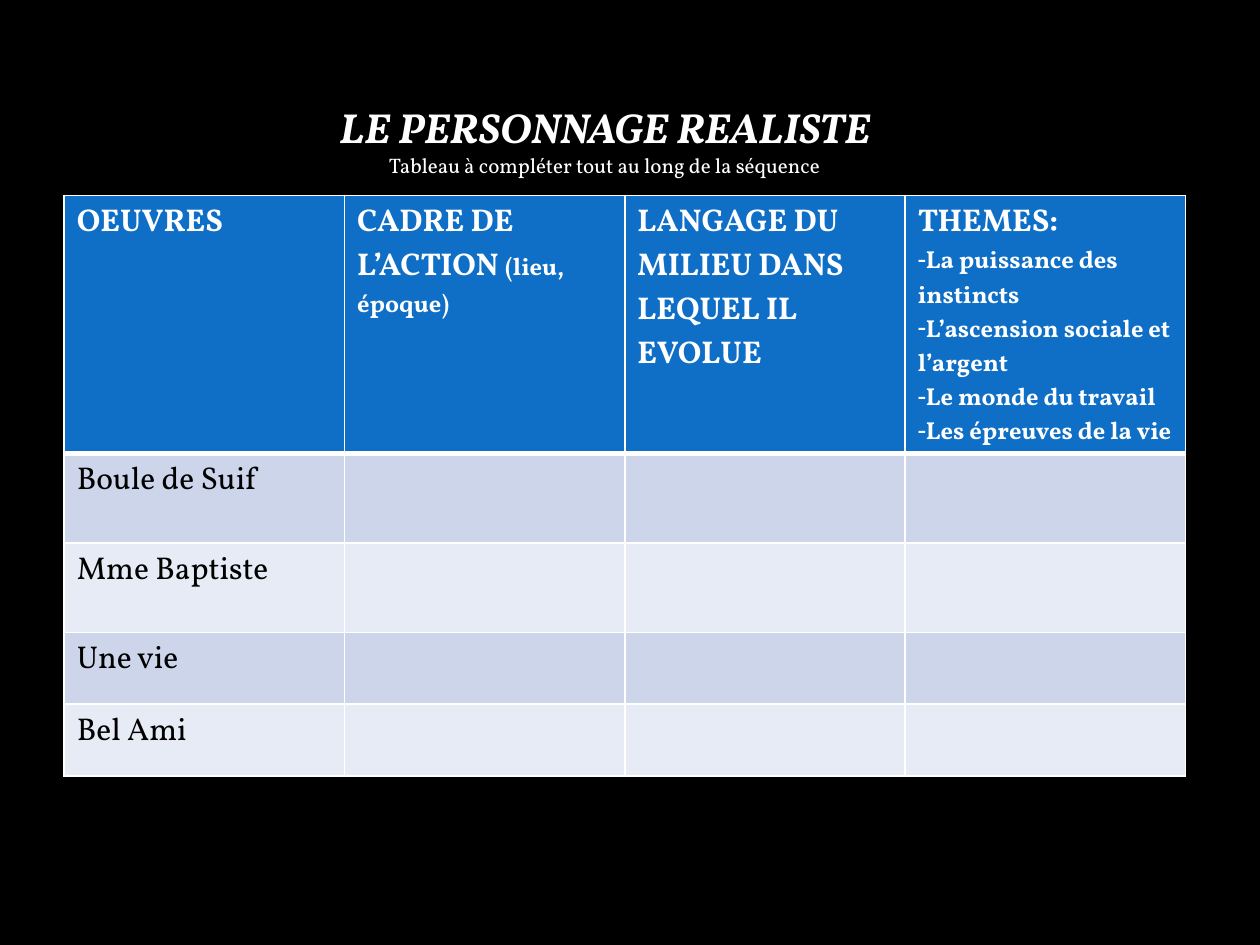
import pptx
import pptx.util
import pptx.dml.color
import pptx.enum.text
import lxml.etree

THEME = dict(
    font="Vollkorn", back="000000", light="FFFFFF", dark="000000",
    head="0F6FC6", bands=("CCD5EA", "E7EBF5"),
    title=24, main=18, list=14, note=12, thin=1, thick=3,
)
RGB = pptx.dml.color.RGBColor.from_string
NS = "{http://schemas.openxmlformats.org/drawingml/2006/main}"


def write(para, text, size=THEME["main"], color=THEME["light"],
          bold=False, slant=False, center=False, mark=None):
    """Add a run to a paragraph, with an optional bullet mark."""
    run = para.add_run()
    run.text = text
    font = run.font
    font.name, font.size = THEME["font"], pptx.util.Pt(size)
    font.bold, font.italic = bold, slant
    font.color.rgb = RGB(color)
    if center:
        para.alignment = pptx.enum.text.PP_ALIGN.CENTER
    if mark:
        props = para._p.get_or_add_pPr()
        props.set("marL", "0")
        props.set("indent", "0")
        lxml.etree.SubElement(props, NS + "buChar", char=mark)


def edge(cell, side, width):
    """Draw one border of a cell; call before the fill is set."""
    line = lxml.etree.SubElement(cell._tc.get_or_add_tcPr(), NS + "ln" + side,
                                 w=str(pptx.util.Pt(width)))
    fill = lxml.etree.SubElement(line, NS + "solidFill")
    lxml.etree.SubElement(fill, NS + "srgbClr", val=THEME["light"])


# Slide
deck = pptx.Presentation()
deck.slide_width = pptx.util.Inches(10)
deck.slide_height = pptx.util.Inches(7.5)
slide = deck.slides.add_slide(deck.slide_layouts[6])
slide.background.fill.solid()
slide.background.fill.fore_color.rgb = RGB(THEME["back"])

# Title and note
box = slide.shapes.add_textbox(*map(pptx.util.Inches, (0.43, 0.76, 8.74, 0.71)))
frame = box.text_frame
frame.word_wrap = True
frame.auto_size = pptx.enum.text.MSO_AUTO_SIZE.SHAPE_TO_FIT_TEXT
write(frame.paragraphs[0], "LE PERSONNAGE REALISTE", size=THEME["title"],
      bold=True, slant=True, center=True)
write(frame.add_paragraph(), "Tableau à compléter tout au long de la séquence",
      size=THEME["note"], center=True)

# Table grid
works = ["Boule de Suif", "Mme Baptiste", "Une vie", "Bel Ami"]
rows = [2.05, 0.71, 0.71, 0.57, 0.57]
cols = 4
table = slide.shapes.add_table(
    len(rows), cols, *map(pptx.util.Inches, (0.51, 1.55, 8.9, sum(rows)))).table
for row, high in zip(table.rows, rows):
    row.height = pptx.util.Inches(high)
for col in table.columns:
    col.width = pptx.util.Inches(8.9 / cols)

# Borders and fills, with a thick rule under the heads
for r in range(len(rows)):
    for c in range(cols):
        cell = table.cell(r, c)
        for side in "LRTB":
            rule = (r, side) in ((0, "B"), (1, "T"))
            edge(cell, side, THEME["thick" if rule else "thin"])
        cell.fill.solid()
        cell.fill.fore_color.rgb = RGB(
            THEME["bands"][(r - 1) % 2] if r else THEME["head"])

# Column heads
heads = ["OEUVRES", "CADRE DE L’ACTION ",
         "LANGAGE DU MILIEU DANS LEQUEL IL EVOLUE", "THEMES:"]
for c, text in enumerate(heads):
    write(table.cell(0, c).text_frame.paragraphs[0], text, bold=True)
write(table.cell(0, 1).text_frame.paragraphs[0], "(lieu, époque)",
      size=THEME["list"], bold=True)

# List of themes
for text in ("La puissance des instincts", "L’ascension sociale et l’argent",
             "Le monde du travail", "Les épreuves de la vie"):
    write(table.cell(0, 3).text_frame.add_paragraph(), text,
          size=THEME["list"], bold=True, mark="-")

# Works
for r, text in enumerate(works, 1):
    write(table.cell(r, 0).text_frame.paragraphs[0], text, color=THEME["dark"])

deck.save("out.pptx")
